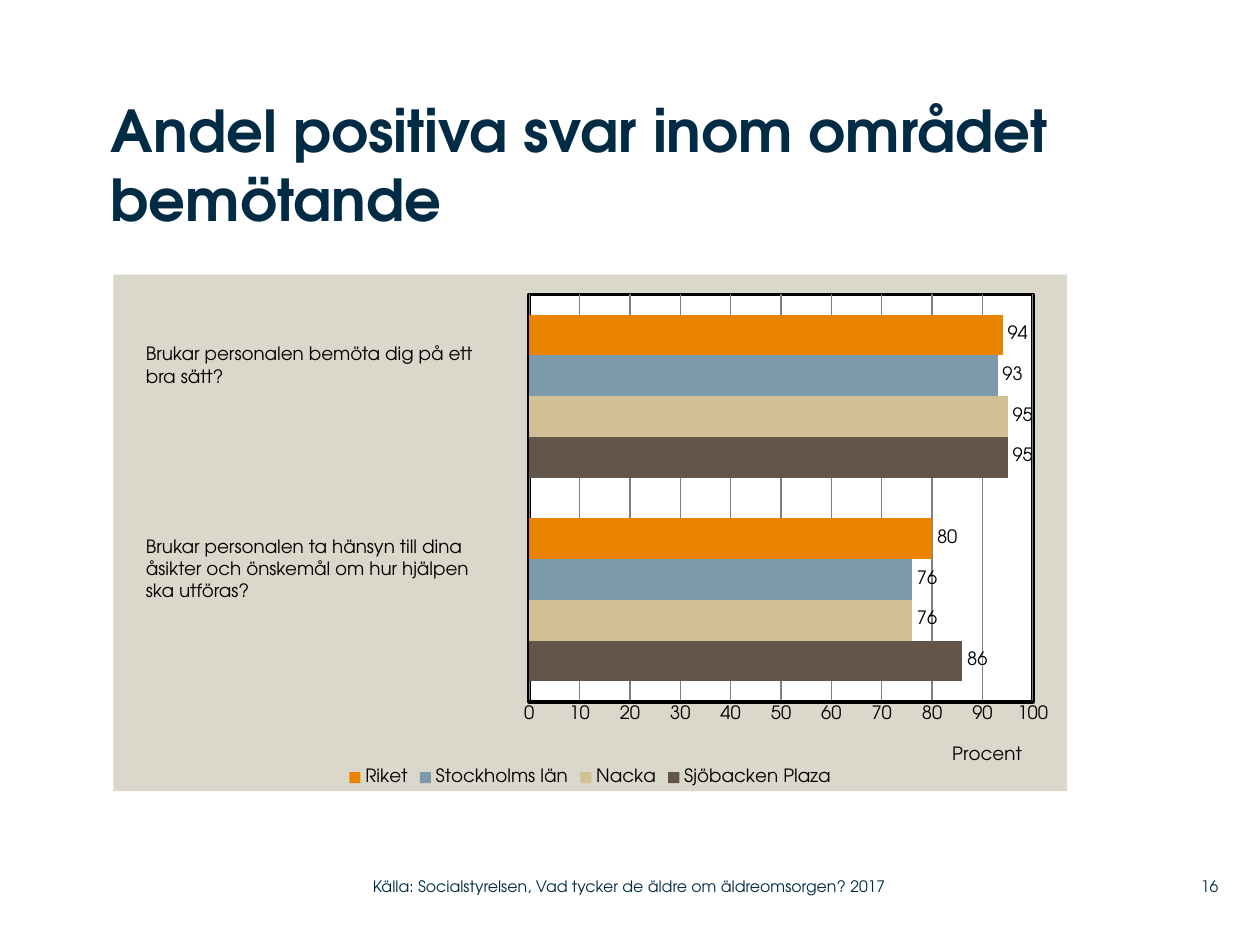
from lxml.etree import SubElement
from pptx import Presentation
from pptx.chart.data import CategoryChartData
from pptx.dml.color import RGBColor
from pptx.enum.chart import XL_CHART_TYPE, XL_LABEL_POSITION, XL_LEGEND_POSITION, XL_TICK_MARK
from pptx.enum.text import MSO_ANCHOR, PP_ALIGN
from pptx.oxml import parse_xml
from pptx.oxml.ns import nsdecls, qn
from pptx.util import Emu, Pt

EMU_PER_PX = 9144
NAVY, BLACK, WHITE, GREY, SAND = "002B45", "000000", "FFFFFF", "808080", "DAD7CB"
SERIES = [
    ("Sjöbacken Plaza", (86, 95), "635549"),
    ("Nacka", (76, 95), "D3BF96"),
    ("Stockholms län", (76, 93), "7D9AAA"),
    ("Riket", (80, 94), "E98300"),
]


def px(length):
    """Turn a length in px into EMU."""
    return Emu(length * EMU_PER_PX)


def color(value):
    """Turn a hex string into a colour."""
    return RGBColor.from_string(value)


def area_style(fill, border=None):
    """Build the fill and border of a chart area."""
    outline = "<a:noFill/>"
    if border:
        outline = f'<a:solidFill><a:srgbClr val="{border}"/></a:solidFill>'
    return parse_xml(
        f'<c:spPr {nsdecls("c", "a")}><a:solidFill><a:srgbClr val="{fill}"/></a:solidFill>'
        f'<a:ln w="25400">{outline}</a:ln></c:spPr>'
    )


def manual_layout(parent, index, target=None, **fractions):
    """Place a chart part by fractions of the chart."""
    for old in parent.findall(qn("c:layout")):
        parent.remove(old)
    layout = parse_xml(f'<c:layout {nsdecls("c")}><c:manualLayout/></c:layout>')
    settings = {"layoutTarget": target} if target else {}
    settings.update(xMode="edge", yMode="edge", **fractions)
    for name, value in settings.items():
        SubElement(layout[0], qn(f"c:{name}")).set("val", str(value))
    parent.insert(index, layout)


class SlideBuilder:
    """Hold the style and the current slide."""

    font_name = "TeX Gyre Adventor"
    chart_size = 10.5

    def __init__(self, presentation):
        """Add a blank slide."""
        self.slide = presentation.slides.add_slide(presentation.slide_layouts[6])

    def style(self, font, size, font_color, bold=False):
        """Apply the slide's typeface to a font."""
        font.name, font.size, font.bold = self.font_name, Pt(size), bold
        font.color.rgb = color(font_color)

    def text(self, box, text, size, font_color, bold=False, inset=True,
             anchor=MSO_ANCHOR.TOP, align=PP_ALIGN.LEFT):
        """Add a wrapped text box."""
        shape = self.slide.shapes.add_textbox(*map(px, box))
        frame = shape.text_frame
        frame.word_wrap = True
        frame.vertical_anchor = anchor
        if not inset:
            frame.margin_left = frame.margin_right = frame.margin_top = frame.margin_bottom = 0
        frame.text = text
        for paragraph in frame.paragraphs:
            paragraph.alignment = align
            for run in paragraph.runs:
                self.style(run.font, size, font_color, bold)

    def bar_chart(self, box, categories, series_rows, axis_title):
        """Add the clustered bar chart."""
        data = CategoryChartData()
        data.categories = categories
        for name, values, _ in series_rows:
            data.add_series(name, values)
        chart = self.slide.shapes.add_chart(XL_CHART_TYPE.BAR_CLUSTERED, *map(px, box), data).chart
        chart.has_title = False
        self.style(chart.font, self.chart_size, BLACK)
        chart.font._element.getparent().getparent().getparent().addprevious(area_style(SAND))
        plot_area = chart._chartSpace.chart.plotArea
        manual_layout(plot_area, 0, "inner", x=0.436, y=0.038, w=0.528, h=0.789)
        plot_area.append(area_style(WHITE, BLACK))
        self.bars(chart.plots[0], series_rows)
        chart.category_axis.visible = False
        self.value_axis(chart.value_axis, axis_title)
        chart.has_legend = True
        chart.legend.position = XL_LEGEND_POSITION.BOTTOM
        chart.legend.include_in_layout = False
        self.style(chart.legend.font, self.chart_size, BLACK)

    def bars(self, plot, series_rows):
        """Colour and label the bars."""
        plot.gap_width, plot.overlap = 100, 0
        plot.vary_by_categories = False
        for series, (_, _, fill) in zip(plot.series, series_rows):
            series.format.fill.solid()
            series.format.fill.fore_color.rgb = color(fill)
            labels = series.data_labels
            labels.show_value = True
            labels.position = XL_LABEL_POSITION.OUTSIDE_END
            self.style(labels.font, self.chart_size, BLACK)

    def value_axis(self, axis, title):
        """Style the percentage axis."""
        axis.minimum_scale, axis.maximum_scale, axis.major_unit = 0, 100, 10
        axis.major_tick_mark = axis.minor_tick_mark = XL_TICK_MARK.NONE
        axis.has_major_gridlines = True
        for line, line_color, width in ((axis.format.line, BLACK, 2),
                                        (axis.major_gridlines.format.line, GREY, 0.75)):
            line.color.rgb = color(line_color)
            line.width = Pt(width)
        self.style(axis.tick_labels.font, self.chart_size, BLACK)
        frame = axis.axis_title.text_frame
        frame.text = title
        self.style(frame.paragraphs[0].runs[0].font, self.chart_size, BLACK)
        manual_layout(axis.axis_title._element, 1, x=0.876, y=0.905)


def main():
    """Build and save the slide."""
    presentation = Presentation()
    presentation.slide_width, presentation.slide_height = px(1000), px(750)
    builder = SlideBuilder(presentation)
    builder.bar_chart((90, 218, 757, 410), ("1", "2"), SERIES, "Procent")
    builder.text((88, 75, 760, 142), "Andel positiva svar inom området bemötande",
                 33, NAVY, bold=True, inset=False)
    questions = (
        ((106, 267, 297, 45), "Brukar personalen bemöta dig på ett\nbra sätt?"),
        ((106, 420, 299, 63), "Brukar personalen ta hänsyn till dina\n"
                              "åsikter och önskemål om hur hjälpen\nska utföras?"),
    )
    for box, question in questions:
        builder.text(box, question, 10.5, BLACK)
    footers = (
        ((920, 689, 47, 29), "16", PP_ALIGN.RIGHT),
        ((296, 689, 443, 29),
         "Källa: Socialstyrelsen, Vad tycker de äldre om äldreomsorgen? 2017", PP_ALIGN.LEFT),
    )
    for box, footer, align in footers:
        builder.text(box, footer, 9, NAVY, inset=False, anchor=MSO_ANCHOR.MIDDLE, align=align)
    presentation.save("out.pptx")


if __name__ == "__main__":
    main()
